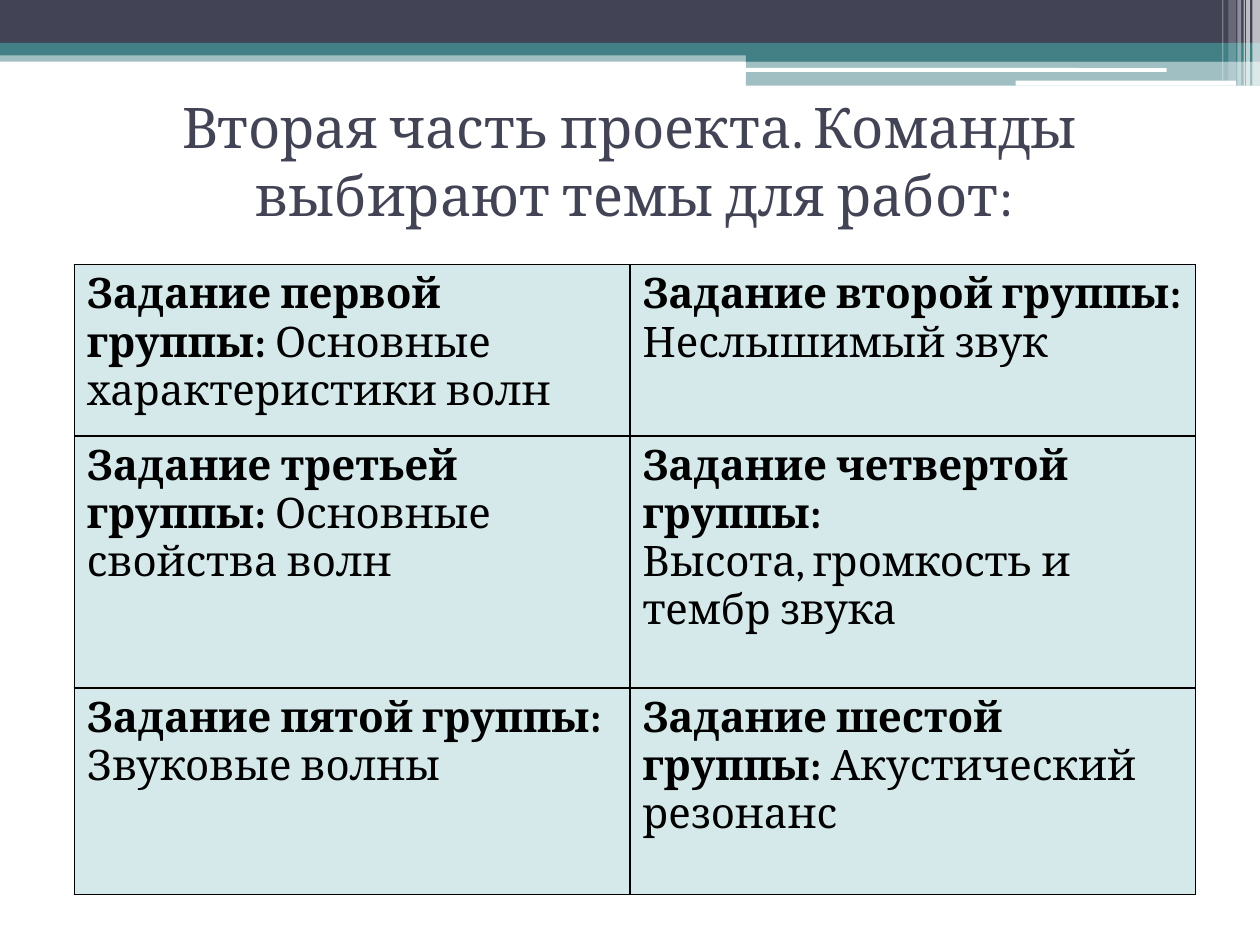
import dataclasses
import typing

import pptx
import pptx.dml.color
import pptx.enum.shapes
import pptx.enum.text
import pptx.oxml
import pptx.oxml.ns
import pptx.util

SHAPE = pptx.enum.shapes.MSO_SHAPE
FONT = "Cambria"
DARK, TEAL, PALE, WHITE, BLACK = "424456", "438086", "D6E9EA", "FFFFFF", "000000"
WIDE, HIGH = pptx.util.Inches(10), pptx.util.Inches(7.5)
COLS, ROWS = 100, 75  # the slide's layout grid


@dataclasses.dataclass
class Band:
    left: float
    top: float
    width: float
    height: float
    color: str = TEAL
    alpha: int = 100
    kind: typing.Any = SHAPE.RECTANGLE


@dataclasses.dataclass
class Task:
    head: str
    theme: str
    split: bool = False  # theme starts a new paragraph


BANDS = [
    Band(0, 4, 100, 0.9, alpha=50),
    Band(0, 0, 100, 3.4, DARK),
    Band(0, 3.4, 100, 1),
    Band(59.2, 3.9, 40.8, 1),
    Band(59.2, 4.8, 40.8, 2, alpha=50),
    Band(59.1, 5.4, 33.5, 0.3, WHITE, kind=SHAPE.ROUNDED_RECTANGLE),
    Band(80.6, 6.4, 17.5, 0.4, WHITE, kind=SHAPE.ROUNDED_RECTANGLE),
]
# left, width, height and opacity of the upright stripes
STRIPES = [
    (99.4, 0.6, 6.8, 65), (98.9, 0.3, 6.8, 65), (98.7, 0.1, 6.8, 60),
    (98.2, 0.3, 6.8, 40), (97.5, 0.6, 6.4, 20), (97, 0.1, 6.4, 30),
]
BANDS += [Band(x, 0, w, h, WHITE, a) for x, w, h, a in STRIPES]

TASKS = [
    [Task("первой", "Основные характеристики волн"),
     Task("второй", "Неслышимый звук", True)],
    [Task("третьей", "Основные свойства волн"),
     Task("четвертой", "Высота, громкость и тембр звука", True)],
    [Task("пятой", "Звуковые волны"),
     Task("шестой", "Акустический резонанс")],
]


def across(cols: float) -> int:
    return round(WIDE * cols / COLS)


def down(rows: float) -> int:
    return round(HIGH * rows / ROWS)


def place(left: float, top: float, width: float, height: float) -> tuple:
    return across(left), down(top), across(width), down(height)


def color(text: str) -> pptx.dml.color.RGBColor:
    return pptx.dml.color.RGBColor.from_string(text)


def paint(fill, tone: str) -> None:
    fill.solid()
    fill.fore_color.rgb = color(tone)


def write(para, text: str, tone: str, **style) -> None:
    run = para.add_run()
    run.text = text
    run.font.color.rgb = color(tone)
    for name, value in {"name": FONT, **style}.items():
        setattr(run.font, name, value)


def draw_band(slide, band: Band) -> None:
    shape = slide.shapes.add_shape(
        band.kind, *place(band.left, band.top, band.width, band.height))
    shape.shadow.inherit = False
    shape.line.fill.background()
    paint(shape.fill, band.color)
    if band.alpha < 100:
        tint = shape.element.spPr.find(".//" + pptx.oxml.ns.qn("a:srgbClr"))
        tint.append(pptx.oxml.parse_xml(
            f'<a:alpha {pptx.oxml.ns.nsdecls("a")} val="{band.alpha * 1000}"/>'))


def draw_edge(cell) -> None:
    props = cell._tc.get_or_add_tcPr()
    for spot, side in enumerate(("lnL", "lnR", "lnT", "lnB")):
        props.insert(spot, pptx.oxml.parse_xml(
            f'<a:{side} {pptx.oxml.ns.nsdecls("a")} w="12700"><a:solidFill>'
            f'<a:srgbClr val="{BLACK}"/></a:solidFill></a:{side}>'))


def draw_cell(cell, task: Task) -> None:
    paint(cell.fill, PALE)
    draw_edge(cell)
    size = pptx.util.Pt(24)
    para = cell.text_frame.paragraphs[0]
    gap = "" if task.split else " "
    write(para, f"Задание {task.head} группы:{gap}", BLACK, size=size, bold=True)
    if task.split:
        para = cell.text_frame.add_paragraph()
    write(para, task.theme, BLACK, size=size, bold=False)


def draw_table(slide) -> None:
    widths, heights = (44.1, 44.9), (13.6, 20, 16.4)
    table = slide.shapes.add_table(
        len(heights), len(widths),
        *place(5.9, 21, sum(widths), sum(heights))).table
    for name in ("first_row", "horz_banding"):
        setattr(table, name, False)
    for col, width in zip(table.columns, widths):
        col.width = across(width)
    for row, height, tasks in zip(table.rows, heights, TASKS):
        row.height = down(height)
        for cell, task in zip(row.cells, tasks):
            draw_cell(cell, task)


def draw_title(slide) -> None:
    frame = slide.shapes.add_textbox(*place(5.1, 6.8, 89.8, 11.8)).text_frame
    style = {"word_wrap": True,
             "vertical_anchor": pptx.enum.text.MSO_ANCHOR.MIDDLE}
    for name, value in style.items():
        setattr(frame, name, value)
    para = frame.paragraphs[0]
    para.alignment = pptx.enum.text.PP_ALIGN.CENTER
    para.space_before = pptx.util.Pt(3)
    props = para._p.get_or_add_pPr()
    for name, cols in {"marL": 0.7, "indent": -2.8}.items():
        props.set(name, str(across(cols)))
    write(para, "Вторая часть проекта. Команды выбирают темы для работ:",
          DARK, size=pptx.util.Pt(32))


def main() -> None:
    deck = pptx.Presentation()
    deck.slide_width, deck.slide_height = WIDE, HIGH
    slide = deck.slides.add_slide(deck.slide_layouts[6])
    # header bands and stripes
    for band in BANDS:
        draw_band(slide, band)
    # group tasks, then the title
    draw_table(slide)
    draw_title(slide)
    deck.save("out.pptx")


if __name__ == "__main__":
    main()
